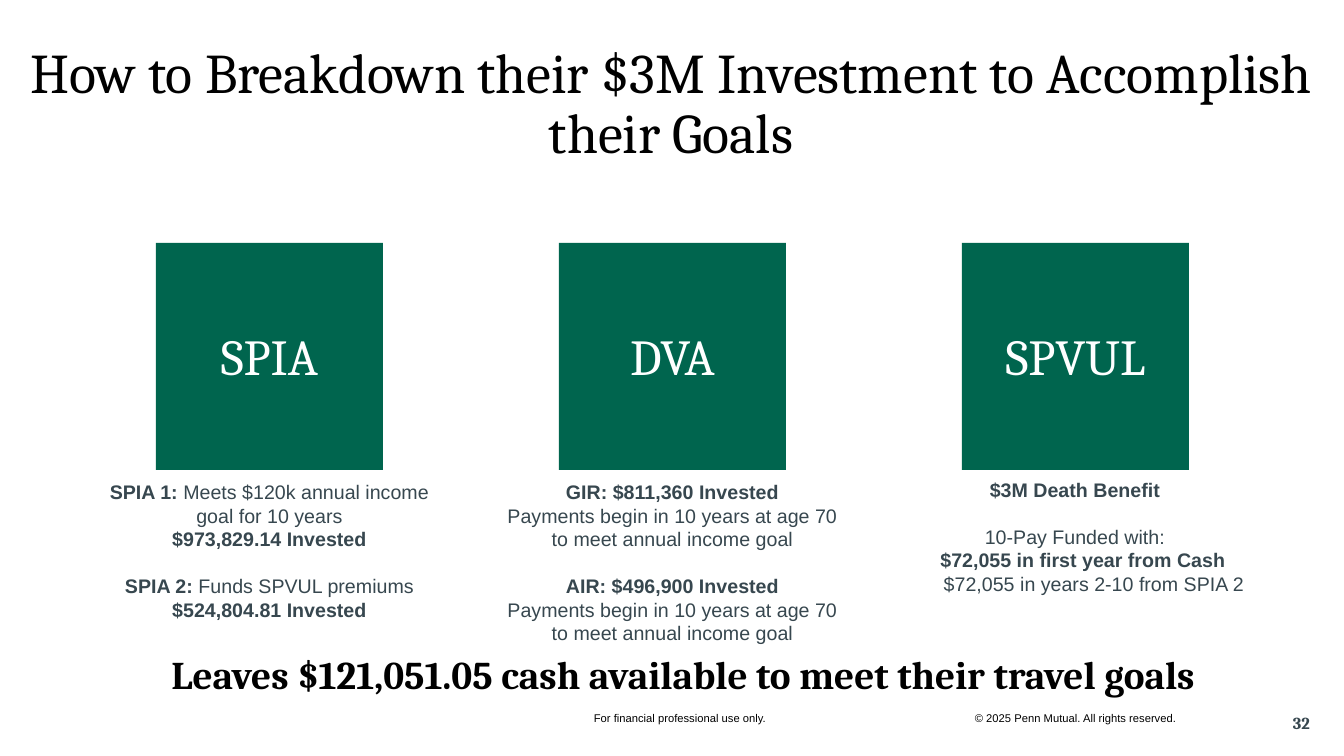
from dataclasses import dataclass

from pptx import Presentation
from pptx.dml.color import RGBColor
from pptx.enum.shapes import MSO_SHAPE
from pptx.enum.text import MSO_ANCHOR, MSO_AUTO_SIZE, PP_ALIGN
from pptx.util import Emu, Pt

RECTANGLE = MSO_SHAPE.RECTANGLE
TOP, MIDDLE = MSO_ANCHOR.TOP, MSO_ANCHOR.MIDDLE
LEFT, CENTER = PP_ALIGN.LEFT, PP_ALIGN.CENTER
NO_AUTOFIT = MSO_AUTO_SIZE.NONE
EMU_PER_PX = 914400 / 100.8
TITLE_ONLY_LAYOUT = 5


@dataclass(frozen=True)
class Theme:
    green: str = "00654E"
    tile_text: str = "FEFFFF"
    white: str = "FFFFFF"
    black: str = "000000"
    slate: str = "37474F"
    serif: str = "Cambria"
    sans: str = "Arial"
    title: int = 40
    tile: int = 36
    summary: int = 28
    body: int = 14
    number: int = 12
    footer: int = 8
    body_line: float = 16.8
    tight_line: float = 15.2


THEME = Theme()


@dataclass(frozen=True)
class Span:
    text: str
    bold: bool = False


@dataclass(frozen=True)
class Line:
    spans: tuple[Span, ...]
    indent: int = 0
    before: float = 0
    pitch: float = THEME.body_line


@dataclass(frozen=True)
class Column:
    name: str
    width: int
    lines: tuple[Line, ...]


@dataclass(frozen=True)
class Label:
    text: str
    area: tuple[int, int, int, int]
    size: int
    font: str
    color: str
    bold: bool = False
    align: PP_ALIGN = CENTER


TILE_LEFT, TILE_TOP, TILE_SIDE, TILE_STEP = 156, 243, 227, 403
CAPTION_TOP, CAPTION_HEIGHT = 475, 143
PAYMENTS = Line((Span("Payments begin in 10 years at age 70 to meet annual income goal"),))

COLUMNS = (
    Column("SPIA", 359, (
        Line((Span("SPIA 1: ", True), Span("Meets $120k annual income goal for 10 years"))),
        Line((Span("$973,829.14 Invested", True),)),
        Line((Span("SPIA 2: ", True), Span("Funds SPVUL premiums")), before=THEME.body_line),
        Line((Span("$524,804.81 Invested", True),)),
    )),
    Column("DVA", 359, (
        Line((Span("GIR: $811,360 Invested", True),)),
        PAYMENTS,
        Line((Span("AIR: $496,900 Invested", True),), before=THEME.body_line),
        PAYMENTS,
    )),
    Column("SPVUL", 384, (
        Line((Span("$3M Death Benefit", True),), pitch=THEME.tight_line),
        Line((Span("10-Pay Funded with:"),), before=THEME.body_line),
        Line((Span("$72,055 in first year from Cash", True),), indent=16),
        Line((Span("$72,055 in years 2-10 from SPIA 2"),), indent=38),
    )),
)

LABELS = (
    Label("Leaves $121,051.05 cash available to meet their travel goals",
          (44, 645, 1278, 90), THEME.summary, THEME.serif, THEME.black, bold=True),
    Label("For financial professional use only.",
          (542, 706, 276, 24), THEME.footer, THEME.sans, THEME.black),
    Label("32", (1283, 708, 56, 30), THEME.number, THEME.serif, THEME.slate,
          bold=True, align=LEFT),
)


def px(length: int) -> Emu:
    return Emu(round(length * EMU_PER_PX))


def add_span(para, text: str, *, size: int, font: str, color: str, bold: bool = False) -> None:
    span = para.add_run()
    span.text = text
    span.font.size = Pt(size)
    span.font.name = font
    span.font.bold = bold
    span.font.color.rgb = RGBColor.from_string(color)


def prepare_frame(box, anchor=TOP):
    frame = box.text_frame
    frame.word_wrap = True
    frame.auto_size = NO_AUTOFIT
    frame.vertical_anchor = anchor
    return frame


def write_text(box, text: str, *, size: int, font: str, color: str, bold: bool = False,
               align=CENTER, anchor=TOP, spacing: float = 1.0) -> None:
    para = prepare_frame(box, anchor).paragraphs[0]
    para.alignment = align
    para.line_spacing = spacing
    add_span(para, text, size=size, font=font, color=color, bold=bold)


def add_box(page, area: tuple[int, int, int, int]):
    return page.shapes.add_textbox(*map(px, area))


def add_block(page, area: tuple[int, int, int, int], fill: str):
    block = page.shapes.add_shape(RECTANGLE, *map(px, area))
    block.shadow.inherit = False
    block.fill.solid()
    block.fill.fore_color.rgb = RGBColor.from_string(fill)
    block.line.fill.background()
    return block


def add_title(page) -> None:
    title = page.shapes.title
    title.left, title.top, title.width, title.height = map(px, (-1, 40, 1344, 90))
    write_text(title, "How to Breakdown their $3M Investment to Accomplish their Goals",
               size=THEME.title, font=THEME.serif, color=THEME.black, spacing=0.9)


def add_column(page, column: Column, index: int) -> None:
    left = TILE_LEFT + index * TILE_STEP
    tile = add_block(page, (left, TILE_TOP, TILE_SIDE, TILE_SIDE), THEME.green)
    tile.text_frame.margin_top = px(10)
    write_text(tile, column.name, size=THEME.tile, font=THEME.serif,
               color=THEME.tile_text, anchor=MIDDLE, spacing=0.9)
    caption_left = left + (TILE_SIDE - column.width) // 2
    caption = add_box(page, (caption_left, CAPTION_TOP, column.width, CAPTION_HEIGHT))
    frame = prepare_frame(caption)
    for position, line in enumerate(column.lines):
        para = frame.add_paragraph() if position else frame.paragraphs[0]
        para.alignment = CENTER
        para.line_spacing = Pt(line.pitch)
        if line.before:
            para.space_before = Pt(line.before)
        if line.indent:
            para._p.get_or_add_pPr().set("marL", str(px(line.indent)))
        for span in line.spans:
            add_span(para, span.text, size=THEME.body, font=THEME.sans,
                     color=THEME.slate, bold=span.bold)


def add_label(page, label: Label) -> None:
    write_text(add_box(page, label.area), label.text, size=label.size, font=label.font,
               color=label.color, bold=label.bold, align=label.align)


def main() -> None:
    deck = Presentation()
    deck.slide_width, deck.slide_height = px(1344), px(756)
    page = deck.slides.add_slide(deck.slide_layouts[TITLE_ONLY_LAYOUT])
    add_title(page)
    for index, column in enumerate(COLUMNS):
        add_column(page, column, index)
    for label in LABELS:
        add_label(page, label)
    rights = add_block(page, (965, 706, 302, 23), THEME.white)
    write_text(rights, "© 2025 Penn Mutual. All rights reserved.", size=THEME.footer,
               font=THEME.sans, color=THEME.black, align=LEFT)
    deck.save("out.pptx")


if __name__ == "__main__":
    main()
